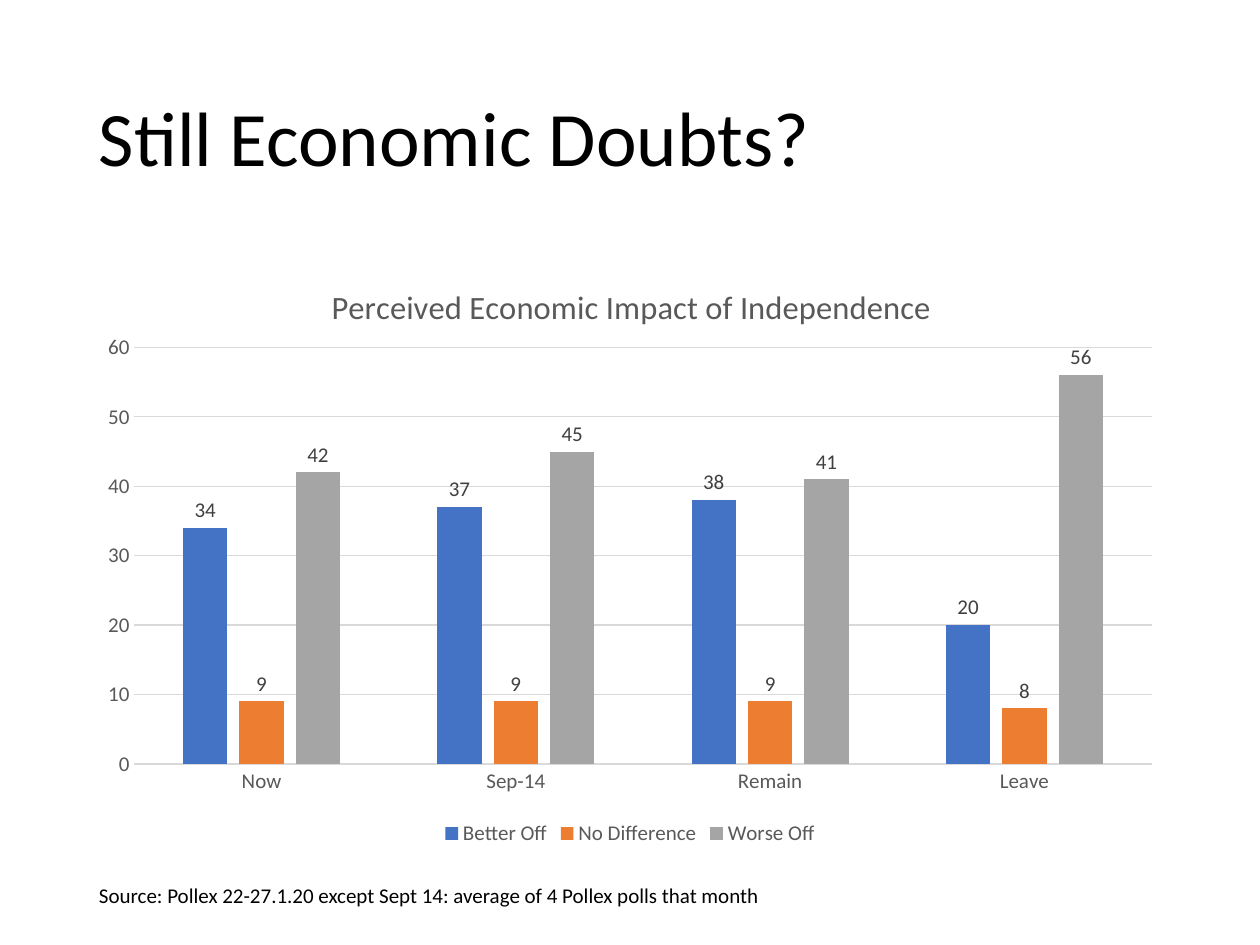
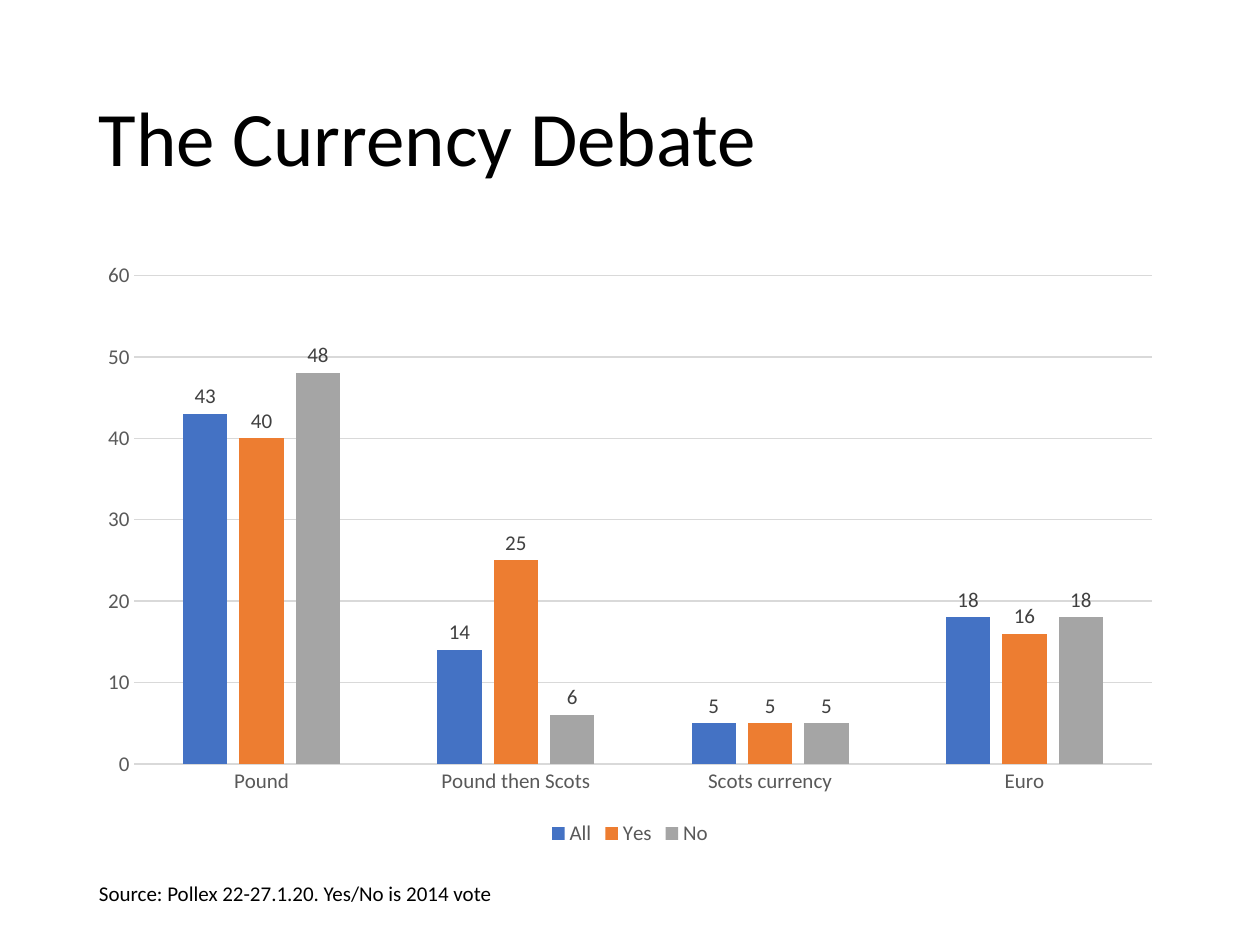
from lxml.etree import SubElement
from pptx import Presentation
from pptx.chart.data import CategoryChartData
from pptx.dml.color import RGBColor
from pptx.enum.chart import XL_CHART_TYPE, XL_LABEL_POSITION, XL_LEGEND_POSITION, XL_TICK_MARK
from pptx.enum.text import MSO_ANCHOR
from pptx.oxml.ns import qn
from pptx.util import Pt

FONT = "Calibri"
BLACK = RGBColor(0x00, 0x00, 0x00)
AXIS_GREY = RGBColor(0x59, 0x59, 0x59)
LABEL_GREY = RGBColor(0x40, 0x40, 0x40)
GRID_GREY = RGBColor(0xD9, 0xD9, 0xD9)
SERIES_COLORS = [
    RGBColor(0x44, 0x72, 0xC4),
    RGBColor(0xED, 0x7D, 0x31),
    RGBColor(0xA5, 0xA5, 0xA5),
]
LEFT, WIDTH = 49.5, 621
PLOT_BOTTOM = 0.855

PAGES = [
    {
        "title": "Still Economic Doubts?",
        "chart_title": "Perceived Economic Impact of Independence",
        "plot_top": 0.16,
        "categories": ["Now", "Sep-14", "Remain", "Leave"],
        "series": {
            "Better Off": [34, 37, 38, 20],
            "No Difference": [9, 9, 9, 8],
            "Worse Off": [42, 45, 41, 56],
        },
        "source": "Source: Pollex 22-27.1.20 except Sept 14: average of 4 Pollex polls that month",
        "source_top": 501,
    },
    {
        "title": "The Currency Debate",
        "chart_title": None,
        "plot_top": 0.04,
        "categories": ["Pound", "Pound then Scots", "Scots currency", "Euro"],
        "series": {
            "All": [43, 14, 5, 18],
            "Yes": [40, 25, 5, 16],
            "No": [48, 6, 5, 18],
        },
        "source": "Source: Pollex 22-27.1.20. Yes/No is 2014 vote",
        "source_top": 499.5,
    },
]


def add_text(page, text, top, height, size, anchor=MSO_ANCHOR.TOP, line_spacing=1.0):
    box = page.shapes.add_textbox(Pt(LEFT), Pt(top), Pt(WIDTH), Pt(height))
    frame = box.text_frame
    frame.word_wrap = True
    frame.vertical_anchor = anchor
    para = frame.paragraphs[0]
    para.line_spacing = line_spacing
    span = para.add_run()
    span.text = text
    span.font.name = FONT
    span.font.size = Pt(size)
    span.font.color.rgb = BLACK


def set_layout(element, **settings):
    """Place a chart part by fractions of the chart's width and height."""
    layout = element.find(qn("c:layout"))
    if layout is None:
        layout = SubElement(element, qn("c:layout"))
        element.insert(0, layout)
    manual = SubElement(layout, qn("c:manualLayout"))
    for name, value in settings.items():
        SubElement(manual, qn(f"c:{name}")).set("val", str(value))


deck = Presentation()
deck.slide_width, deck.slide_height = Pt(720), Pt(540)

for content in PAGES:
    page = deck.slides.add_slide(deck.slide_layouts[6])
    add_text(page, content["title"], 28.75, 104.4, 44, MSO_ANCHOR.MIDDLE, line_spacing=0.9)

    chart_data = CategoryChartData(number_format="General")
    chart_data.categories = content["categories"]
    for name, values in content["series"].items():
        chart_data.add_series(name, values)
    chart = page.shapes.add_chart(
        XL_CHART_TYPE.COLUMN_CLUSTERED, Pt(LEFT), Pt(143.75), Pt(WIDTH), Pt(342.6), chart_data
    ).chart
    chart.font.name = FONT
    chart.font.size = Pt(12)
    chart.font.color.rgb = AXIS_GREY

    chart.has_title = content["chart_title"] is not None
    if chart.has_title:
        title_frame = chart.chart_title.text_frame
        title_frame.text = content["chart_title"]
        title_font = title_frame.paragraphs[0].runs[0].font
        title_font.name = FONT
        title_font.size = Pt(18.6)
        title_font.bold = False
        title_font.color.rgb = AXIS_GREY
        set_layout(chart.chart_title._element, xMode="edge", yMode="edge", x=0.22, y=0.045)

    chart.has_legend = True
    chart.legend.position = XL_LEGEND_POSITION.BOTTOM
    chart.legend.include_in_layout = False

    plot = chart.plots[0]
    plot.gap_width = 219
    plot.overlap = -27
    plot.vary_by_categories = False
    for series, color in zip(plot.series, SERIES_COLORS):
        series.format.fill.solid()
        series.format.fill.fore_color.rgb = color
    plot.has_data_labels = True
    labels = plot.data_labels
    labels.show_value = True
    labels.position = XL_LABEL_POSITION.OUTSIDE_END
    labels.font.name = FONT
    labels.font.size = Pt(12)
    labels.font.color.rgb = LABEL_GREY

    value_axis, category_axis = chart.value_axis, chart.category_axis
    for axis in (value_axis, category_axis):
        axis.major_tick_mark = axis.minor_tick_mark = XL_TICK_MARK.NONE
    value_axis.minimum_scale, value_axis.maximum_scale = 0, 60
    value_axis.major_unit = 10
    value_axis.format.line.fill.background()
    value_axis.has_major_gridlines = True
    for line in (value_axis.major_gridlines.format.line, category_axis.format.line):
        line.color.rgb = GRID_GREY
        line.width = Pt(0.75)

    plot_top = content["plot_top"]
    set_layout(
        chart._chartSpace.chart.plotArea,
        layoutTarget="inner", xMode="edge", yMode="edge",
        x=0.044, y=plot_top, w=0.936, h=round(PLOT_BOTTOM - plot_top, 3),
    )

    add_text(page, content["source"], content["source_top"], 21.6, 12)

deck.save("out.pptx")
